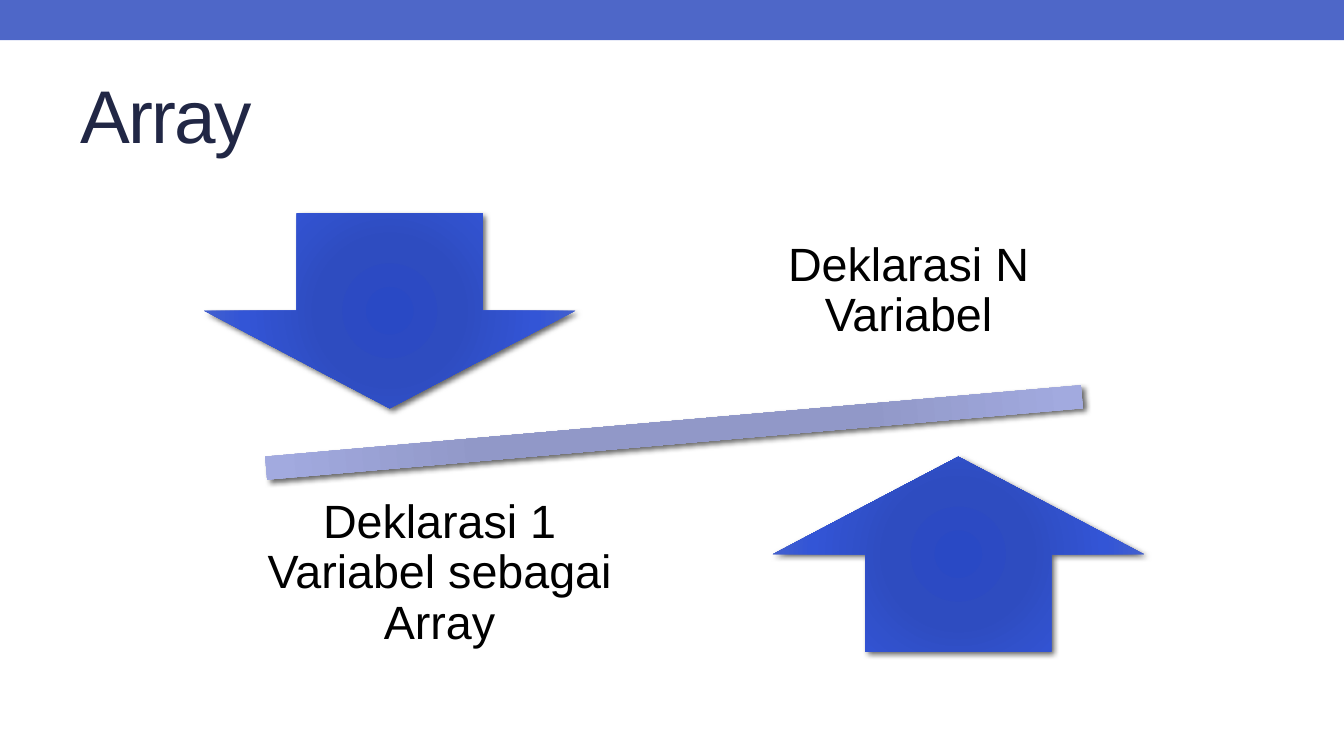
"""Build the slide that weighs one array against N variables."""
from dataclasses import dataclass

from pptx import Presentation as new_presentation
from pptx.dml.color import RGBColor
from pptx.enum.shapes import MSO_SHAPE as Preset
from pptx.enum.text import MSO_ANCHOR as Anchor, PP_ALIGN as Align
from pptx.oxml import parse_xml
from pptx.oxml.ns import nsdecls
from pptx.shapes.autoshape import Shape
from pptx.slide import Slide
from pptx.text.text import Font
from pptx.util import Pt

Stops = tuple[tuple[int, str], ...]


@dataclass(frozen=True)
class Theme:
    font: str = "Arial"
    title_size: float = 40
    label_size: float = 25
    banner: str = "4E67C8"
    title: str = "212745"
    label: str = "000000"
    shadow: str = "000000"
    arrow: Stops = ((0, "2949C5"), (34, "2E4CC0"), (70, "3355D6"), (100, "4E67C8"))
    beam: Stops = ((0, "8F97CA"), (34, "9198C8"), (70, "A2AADF"), (100, "B2B8E0"))


@dataclass(frozen=True)
class Box:
    center_x: float
    center_y: float
    width: float
    height: float

    def lengths(self) -> tuple[Pt, Pt, Pt, Pt]:
        left = self.center_x - self.width / 2
        top = self.center_y - self.height / 2
        return Pt(left), Pt(top), Pt(self.width), Pt(self.height)


@dataclass(frozen=True)
class Side:
    direction: int
    arrow: Preset
    label: str


THEME = Theme()
SLIDE_WIDTH, SLIDE_HEIGHT = 720, 405
PIVOT_X, PIVOT_Y = 361.1, 231.7
ARROW_SHIFT = (152.3, 65.2)
LABEL_SHIFT = (125.6, 75.6)
SIDES = (
    Side(-1, Preset.DOWN_ARROW, "Deklarasi N Variabel"),
    Side(1, Preset.UP_ARROW, "Deklarasi 1 Variabel sebagai Array"),
)


def style_font(font: Font, size: float, color: str) -> None:
    font.name = THEME.font
    font.size = Pt(size)
    font.color.rgb = RGBColor.from_string(color)


def add_plain_shape(slide: Slide, preset: Preset, box: Box) -> Shape:
    shape = slide.shapes.add_shape(preset, *box.lengths())
    shape.shadow.inherit = False
    shape.line.fill.background()
    return shape


def add_glowing_shape(slide: Slide, preset: Preset, box: Box, stops: Stops) -> Shape:
    shape = add_plain_shape(slide, preset, box)
    stop_xml = "".join(
        f'<a:gs pos="{position * 1000}"><a:srgbClr val="{color}"/></a:gs>'
        for position, color in stops
    )
    gradient = parse_xml(
        f'<a:gradFill {nsdecls("a")} rotWithShape="1"><a:gsLst>{stop_xml}</a:gsLst>'
        '<a:path path="circle"><a:fillToRect l="100000" t="100000" r="100000" '
        'b="100000"/></a:path></a:gradFill>'
    )
    shadow = parse_xml(
        f'<a:outerShdw {nsdecls("a")} blurRad="{Pt(3)}" dist="{Pt(2)}" '
        f'dir="{45 * 60000}" rotWithShape="0"><a:srgbClr val="{THEME.shadow}">'
        '<a:alpha val="60000"/></a:srgbClr></a:outerShdw>'
    )
    properties = shape.element.spPr
    properties.find("{*}ln").addprevious(gradient)
    properties.find("{*}effectLst").append(shadow)
    return shape


def add_label(slide: Slide, text: str, box: Box) -> None:
    frame = slide.shapes.add_textbox(*box.lengths()).text_frame
    frame.word_wrap = True
    frame.vertical_anchor = Anchor.MIDDLE
    frame.margin_left = frame.margin_right = Pt(13.7)
    frame.margin_top = frame.margin_bottom = Pt(13.7)
    frame.text = text
    paragraph = frame.paragraphs[0]
    paragraph.alignment = Align.CENTER
    paragraph.line_spacing = 0.9
    paragraph.space_after = Pt(8.75)
    style_font(paragraph.runs[0].font, THEME.label_size, THEME.label)


def add_side(slide: Slide, side: Side) -> None:
    across, down = (side.direction * shift for shift in ARROW_SHIFT)
    arrow_box = Box(PIVOT_X + across, PIVOT_Y + down, 198.7, 104.4)
    add_glowing_shape(slide, side.arrow, arrow_box, THEME.arrow)
    across, down = (side.direction * shift for shift in LABEL_SHIFT)
    add_label(slide, side.label, Box(PIVOT_X - across, PIVOT_Y + down, 211.7, 109.4))


def set_title(slide: Slide, text: str) -> None:
    title = slide.shapes.title
    title.left, title.top, title.width, title.height = Pt(36), Pt(31.7), Pt(648), Pt(58.3)
    frame = title.text_frame
    frame.vertical_anchor = Anchor.MIDDLE
    frame.text = text
    frame.paragraphs[0].alignment = Align.LEFT
    run = frame.paragraphs[0].runs[0]
    style_font(run.font, THEME.title_size, THEME.title)
    run.font._element.set("spc", "-100")


def main() -> None:
    presentation = new_presentation()
    presentation.slide_width, presentation.slide_height = Pt(SLIDE_WIDTH), Pt(SLIDE_HEIGHT)
    slide = presentation.slides.add_slide(presentation.slide_layouts[5])

    banner = add_plain_shape(slide, Preset.RECTANGLE, Box(SLIDE_WIDTH / 2, 10.8, SLIDE_WIDTH, 21.6))
    banner.fill.solid()
    banner.fill.fore_color.rgb = RGBColor.from_string(THEME.banner)

    beam_box = Box(PIVOT_X, PIVOT_Y, 596.9, 52.6)
    beam = add_glowing_shape(slide, Preset.MATH_MINUS, beam_box, THEME.beam)
    beam.rotation = 355
    for side in SIDES:
        add_side(slide, side)
    set_title(slide, "Array")
    presentation.save("out.pptx")


if __name__ == "__main__":
    main()
